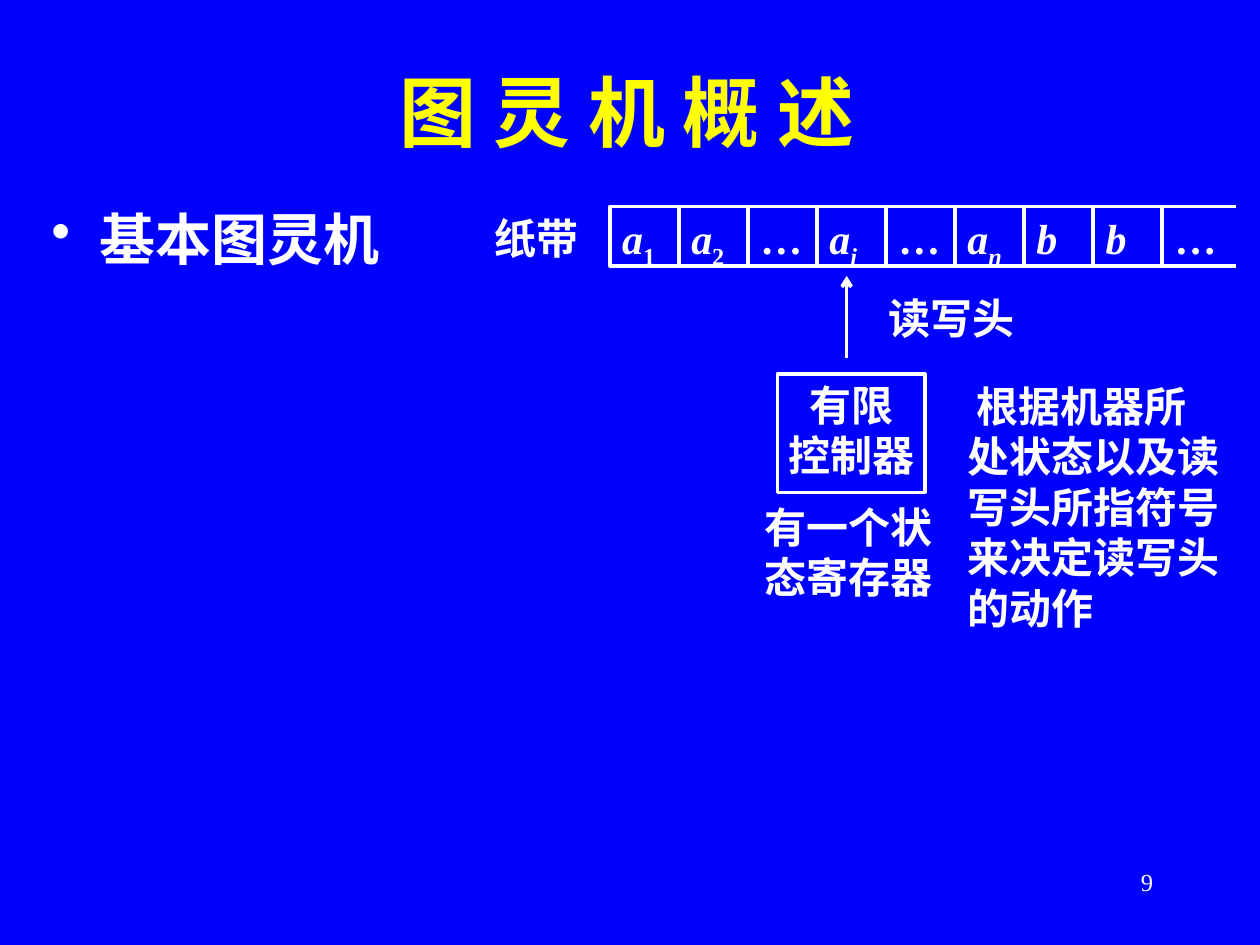
import pptx
import pptx.dml.color
import pptx.enum.shapes
import pptx.enum.text
import pptx.oxml
import pptx.oxml.ns
import pptx.util
from pptx.util import Inches

BLUE = pptx.dml.color.RGBColor(0x00, 0x00, 0xFF)
YELLOW = pptx.dml.color.RGBColor(0xFF, 0xFF, 0x00)
WHITE = pptx.dml.color.RGBColor(0xFF, 0xFF, 0xFF)
SERIF, MONO, CJK = "Times New Roman", "Courier New", "Noto Sans CJK SC"
ALIGN = pptx.enum.text.PP_ALIGN
ANCHOR = pptx.enum.text.MSO_ANCHOR

CELL_W, CELL_H = 0.548, 0.47
TAPE_X, TAPE_Y = 4.84, 1.64
# Symbol, subscript, subscript is italic
TAPE = [("a", "1", False), ("a", "2", False), ("…", "", False),
        ("a", "i", True), ("…", "", False), ("a", "n", True),
        ("b", "", False), ("b", "", False)]


def add_run(p, text, size=24, font=SERIF, color=WHITE, bold=True,
            italic=False, baseline=None):
    r = p.add_run()
    r.text = text
    f = r.font
    f.size, f.name, f.bold, f.italic = pptx.util.Pt(size), font, bold, italic
    f.color.rgb = color
    rpr = r._r.get_or_add_rPr()
    ea = pptx.oxml.parse_xml(
        f'<a:ea {pptx.oxml.ns.nsdecls("a")} typeface="{CJK}"/>')
    rpr.find(pptx.oxml.ns.qn("a:latin")).addnext(ea)
    if baseline:
        rpr.set("baseline", str(baseline * 1000))


def add_text(s, x, y, w, h, text, align=ALIGN.LEFT, anchor=ANCHOR.TOP, **style):
    sp = s.shapes.add_textbox(Inches(x), Inches(y), Inches(w), Inches(h))
    tf = sp.text_frame
    tf.word_wrap = True
    tf.vertical_anchor = anchor
    p = tf.paragraphs[0]
    p.alignment = align
    if text:
        add_run(p, text, **style)
    return p


def add_bullet(s, x, y, w, h, text, size):
    p = add_text(s, x, y, w, h, "")
    ppr = p._p.get_or_add_pPr()
    ppr.set("marL", str(Inches(0.38)))
    ppr.set("indent", str(Inches(-0.38)))
    ppr.append(pptx.oxml.parse_xml(
        f'<a:buChar {pptx.oxml.ns.nsdecls("a")} char="•"/>'))
    add_run(p, text, size=size)


def add_box(s, x, y, w, h):
    sp = s.shapes.add_shape(pptx.enum.shapes.MSO_SHAPE.RECTANGLE,
                            Inches(x), Inches(y), Inches(w), Inches(h))
    sp.shadow.inherit = False
    sp.fill.background()
    sp.line.color.rgb = WHITE
    sp.line.width = pptx.util.Pt(2)
    tf = sp.text_frame
    tf.word_wrap = True
    tf.vertical_anchor = ANCHOR.TOP
    tf.paragraphs[0].alignment = ALIGN.LEFT
    return tf


def add_line(s, x1, y1, x2, y2, head=False):
    c = s.shapes.add_connector(pptx.enum.shapes.MSO_CONNECTOR.STRAIGHT,
                               Inches(x1), Inches(y1), Inches(x2), Inches(y2))
    c.line.color.rgb = WHITE
    c.line.width = pptx.util.Pt(2)
    ns = pptx.oxml.ns.nsdecls("a")
    if head:
        c.line._get_or_add_ln().append(
            pptx.oxml.parse_xml(f'<a:headEnd {ns} type="arrow"/>'))
    c._element.spPr.append(pptx.oxml.parse_xml(f"<a:effectLst {ns}/>"))


def add_tape(s):
    for i, (symbol, sub, sub_italic) in enumerate(TAPE):
        tf = add_box(s, TAPE_X + i * CELL_W, TAPE_Y, CELL_W, CELL_H)
        p = tf.paragraphs[0]
        add_run(p, symbol, italic=symbol != "…")
        if sub:
            add_run(p, sub, italic=sub_italic, baseline=-25)
    # Open end of the tape
    end = TAPE_X + len(TAPE) * CELL_W
    add_text(s, end, TAPE_Y, CELL_W, CELL_H, "…")
    for y in (TAPE_Y, TAPE_Y + CELL_H):
        add_line(s, end, y, 9.81, y)


def add_controller(s):
    tf = add_box(s, 6.17, 2.97, 1.17, 0.94)
    tf.margin_left = tf.margin_right = Inches(0.06)
    tf.margin_top = tf.margin_bottom = Inches(0.04)
    for p, text in ((tf.paragraphs[0], "有限"), (tf.add_paragraph(), "控制器")):
        p.alignment = ALIGN.CENTER
        add_run(p, text, font=CJK)


def main():
    prs = pptx.Presentation()
    prs.slide_width, prs.slide_height = Inches(10), Inches(7.5)
    s = prs.slides.add_slide(prs.slide_layouts[6])
    s.background.fill.solid()
    s.background.fill.fore_color.rgb = BLUE

    # Title and topic
    add_text(s, 0.25, 0.25, 9.45, 1.26, "图 灵 机 概 述", ALIGN.CENTER,
             ANCHOR.MIDDLE, size=44, color=YELLOW)
    add_bullet(s, 0.31, 1.57, 9.45, 5.51, "基本图灵机", 32)

    # Turing machine: tape, head and controller
    add_tape(s)
    add_line(s, 6.72, 2.19, 6.72, 2.84, head=True)
    add_controller(s)

    # Labels
    add_text(s, 3.83, 1.64, 1.02, 0.55, "纸带", font=MONO)
    add_text(s, 6.95, 2.27, 1.25, 0.55, "读写头", font=MONO)
    add_text(s, 5.97, 3.93, 1.64, 0.94, "有一个状态寄存器", font=MONO)
    add_text(s, 7.58, 2.97, 2.23, 2.09,
             " 根据机器所处状态以及读写头所指符号来决定读写头的动作", font=MONO)

    # Page number
    add_text(s, 7.17, 6.83, 2.08, 0.5, "9", ALIGN.RIGHT, size=14, bold=False)
    prs.save("out.pptx")


if __name__ == "__main__":
    main()
